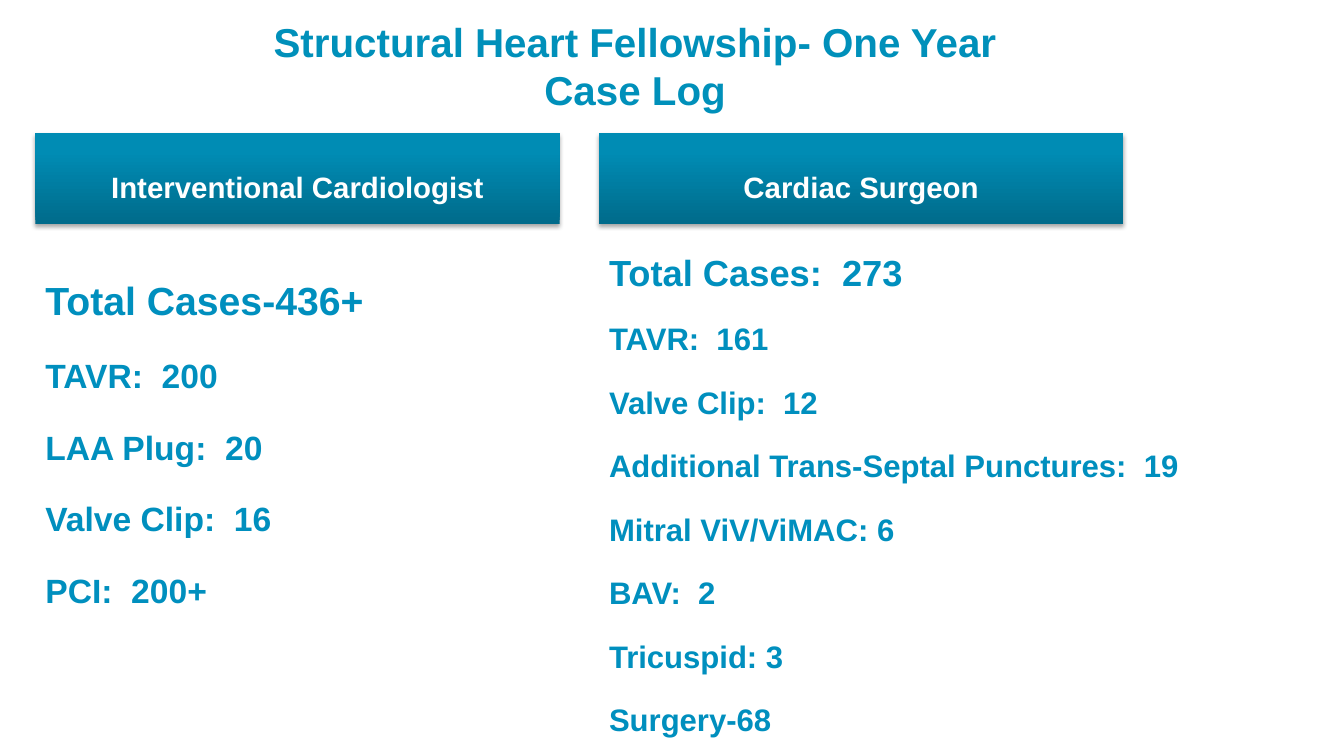
from lxml.etree import SubElement
from pptx import Presentation
from pptx.dml.color import RGBColor
from pptx.enum.text import MSO_ANCHOR, MSO_AUTO_SIZE, PP_ALIGN
from pptx.oxml import parse_xml
from pptx.oxml.ns import nsdecls, qn
from pptx.util import Inches, Pt

TITLE_BLUE, LIST_BLUE, WHITE = "0090BA", "008FBE", "FFFFFF"
BAR_STOPS = [(0, "006B8B"), (80, "008CB4"), (100, "008CB5")]
LEFT_COLUMN, RIGHT_COLUMN = 0.35, 5.94
BAR_TOP, BAR_WIDTH, BAR_HEIGHT = 1.32, 5.2, 0.9


def place(placeholder, left, top, width, height, anchor):
    placeholder.left, placeholder.top = Inches(left), Inches(top)
    placeholder.width, placeholder.height = Inches(width), Inches(height)
    frame = placeholder.text_frame
    frame.word_wrap = True
    frame.auto_size = MSO_AUTO_SIZE.NONE
    frame.vertical_anchor = anchor
    return frame


def add_run(paragraph, text, size, color):
    run = paragraph.add_run()
    run.text = text
    font = run.font
    font.name, font.size, font.bold = "Arial", Pt(size), True
    font.color.rgb = RGBColor.from_string(color)


def fill_title(placeholder, lines):
    frame = place(placeholder, 0.55, 0.12, 11.5, 0.67, MSO_ANCHOR.TOP)
    heading = frame.paragraphs[0]
    heading.alignment = PP_ALIGN.CENTER
    for number, line in enumerate(lines):
        if number:
            heading.add_line_break()
        add_run(heading, line, 28.8, TITLE_BLUE)


def shade_bar(bar):
    """Give the bar its upward gradient and soft shadow below."""
    stops = "".join(
        f'<a:gs pos="{percent * 1000}"><a:srgbClr val="{color}"/></a:gs>'
        for percent, color in BAR_STOPS)
    properties = bar._element.spPr
    properties.append(parse_xml(
        f'<a:gradFill {nsdecls("a")} rotWithShape="1"><a:gsLst>{stops}</a:gsLst>'
        '<a:lin ang="16200000" scaled="0"/></a:gradFill>'))
    properties.append(parse_xml(
        f'<a:effectLst {nsdecls("a")}><a:outerShdw blurRad="{Pt(3.1)}" '
        f'dist="{Pt(1.8)}" dir="5400000" rotWithShape="0"><a:srgbClr val="000000">'
        '<a:alpha val="35000"/></a:srgbClr></a:outerShdw></a:effectLst>'))


def fill_bar(placeholder, left, role):
    frame = place(placeholder, left, BAR_TOP, BAR_WIDTH, BAR_HEIGHT,
                  MSO_ANCHOR.MIDDLE)
    shade_bar(placeholder)
    label = frame.paragraphs[0]
    label.alignment = PP_ALIGN.CENTER
    label.line_spacing = 1.5
    label.space_before = Pt(0)
    add_run(label, role, 21, WHITE)


def fill_case_list(placeholder, box, cases, total_size, case_size, spacing):
    frame = place(placeholder, *box, MSO_ANCHOR.TOP)
    for number, case in enumerate(cases):
        entry = frame.add_paragraph() if number else frame.paragraphs[0]
        properties = entry._p.get_or_add_pPr()
        properties.set("marL", "0")
        properties.set("indent", "0")
        SubElement(properties, qn("a:buNone"))
        entry.line_spacing = spacing
        entry.space_before = Pt(8 if number else 0)
        add_run(entry, case, case_size if number else total_size, LIST_BLUE)


def main():
    deck = Presentation()
    deck.slide_width, deck.slide_height = Inches(13.33), Inches(7.5)
    slide = deck.slides.add_slide(deck.slide_layouts.get_by_name("Comparison"))
    title, left_bar, left_list, right_bar, right_list = slide.placeholders

    fill_title(title, ["Structural Heart Fellowship- One Year", "Case Log"])
    fill_bar(left_bar, LEFT_COLUMN, "Interventional Cardiologist")
    fill_bar(right_bar, RIGHT_COLUMN, "Cardiac Surgeon")
    fill_case_list(
        left_list, (LEFT_COLUMN, 2.46, 5.2, 4.33),
        ["Total Cases-436+", "TAVR:  200", "LAA Plug:  20",
         "Valve Clip:  16", "PCI:  200+"], 28, 24, 1.5)
    fill_case_list(
        right_list, (RIGHT_COLUMN, 2.26, 6.29, 5.11),
        ["Total Cases:  273", "TAVR:  161", "Valve Clip:  12",
         "Additional Trans-Septal Punctures:  19", "Mitral ViV/ViMAC: 6",
         "BAV:  2", "Tricuspid: 3", "Surgery-68"], 25.9, 22.2, 1.4)
    deck.save("out.pptx")


if __name__ == "__main__":
    main()
